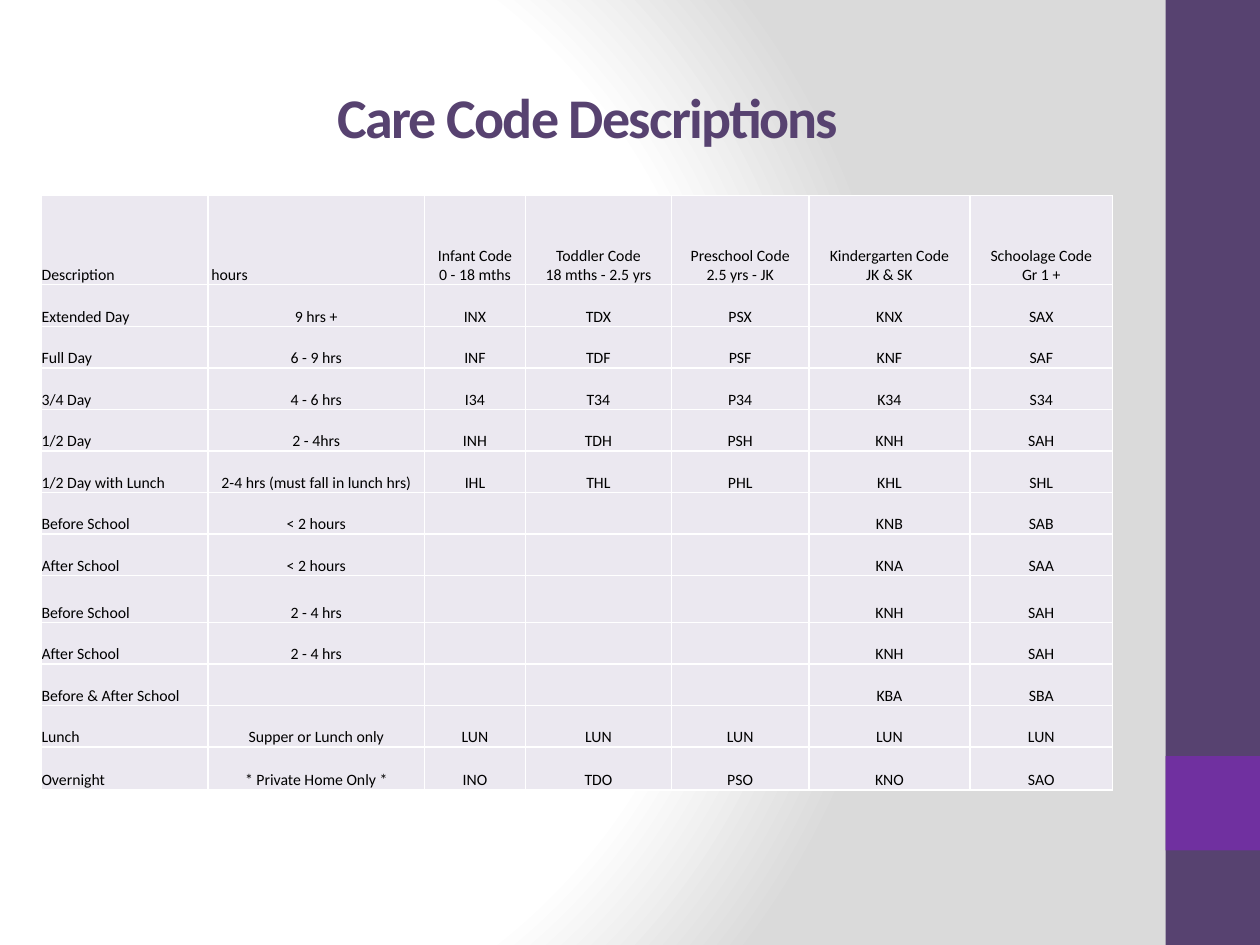
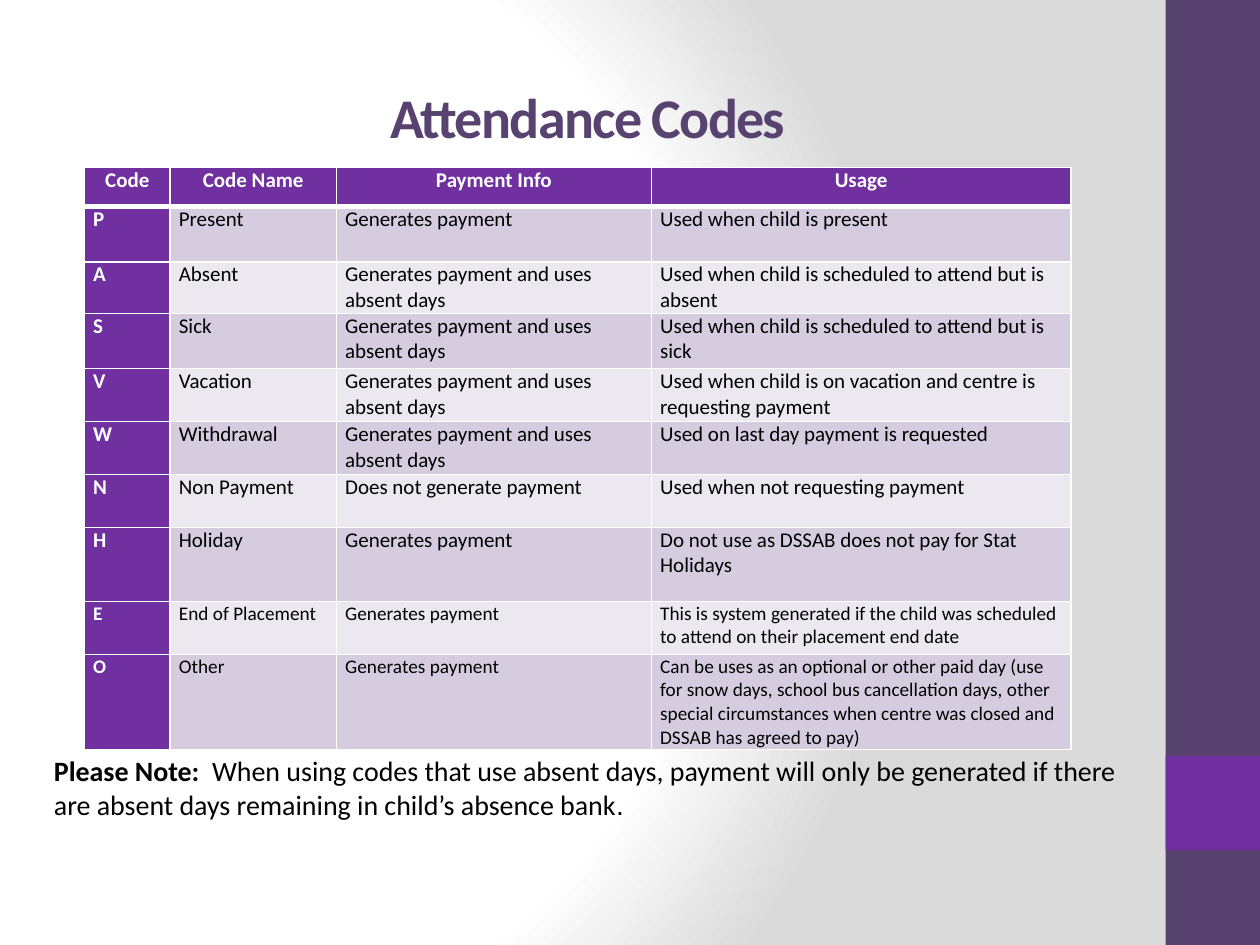
from dataclasses import dataclass

from lxml.etree import SubElement
from pptx import Presentation
from pptx.dml.color import RGBColor
from pptx.enum.shapes import MSO_SHAPE as Shape
from pptx.enum.text import MSO_ANCHOR as Anchor, MSO_AUTO_SIZE as AutoSize, PP_ALIGN as Align
from pptx.oxml import parse_xml
from pptx.oxml.ns import nsdecls, qn
from pptx.util import Inches, Pt

FONT = "Calibri"
COLORS = {
    "plum": "574270",
    "violet": "7030A0",
    "lilac": "D5CDDF",
    "pale": "EBE8F0",
    "grey": "DADADA",
    "white": "FFFFFF",
    "black": "000000",
}


@dataclass(frozen=True)
class Band:
    top: float
    height: float
    color: str


@dataclass(frozen=True)
class CellStyle:
    fill: str
    color: str = "black"
    size: float = 12
    bold: bool = False
    align: Align = Align.LEFT
    anchor: Anchor = Anchor.TOP
    side_margin: float = 0
    top_line: float = 1
    bottom_line: float = 1


BAND_LEFT, BAND_WIDTH = 9.25, 0.75
BANDS = [Band(0, 7.5, "plum"), Band(6, 0.75, "violet")]

# Care codes: description, hours, then one code per age group
CARE_COLUMNS = [1.32, 1.72, 0.8, 1.16, 1.09, 1.28, 1.13]
CARE_HEIGHTS = [0.71] + [0.33] * 7 + [0.37] + [0.33] * 3 + [0.34]
NO_CODES = [""] * 3
CARE_ROWS = [
    ["Description", " hours", "Infant Code\n0 - 18 mths", "Toddler Code\n18 mths - 2.5 yrs",
     "Preschool Code\n2.5 yrs - JK", "Kindergarten Code\nJK & SK", "Schoolage Code\nGr 1 +"],
    ["Extended Day", "9 hrs +", "INX", "TDX", "PSX", "KNX", "SAX"],
    ["Full Day", "6 - 9 hrs", "INF", "TDF", "PSF", "KNF", "SAF"],
    ["3/4 Day", "4 - 6 hrs", "I34", "T34", "P34", "K34", "S34"],
    ["1/2 Day", "2 - 4hrs", "INH", "TDH", "PSH", "KNH", "SAH"],
    ["1/2 Day with Lunch", "2-4 hrs (must fall in lunch hrs)", "IHL", "THL", "PHL", "KHL", "SHL"],
    ["Before School", "< 2 hours", *NO_CODES, "KNB", "SAB"],
    ["After School", "< 2 hours", *NO_CODES, "KNA", "SAA"],
    ["Before School", "2 - 4 hrs", *NO_CODES, "KNH", "SAH"],
    ["After School", "2 - 4 hrs", *NO_CODES, "KNH", "SAH"],
    ["Before & After School", "", *NO_CODES, "KBA", "SBA"],
    ["Lunch", "Supper or Lunch only"] + ["LUN"] * 5,
    ["Overnight", "* Private Home Only *", "INO", "TDO", "PSO", "KNO", "SAO"],
]

# Attendance codes: code, name, payment, usage
ATTENDANCE_COLUMNS = [0.68, 1.32, 2.5, 3.33]
ATTENDANCE_HEIGHTS = [0.31, 0.44, 0.4, 0.44, 0.42, 0.42, 0.42, 0.59, 0.42, 0.74]
PAID = "Generates payment"
PAID_ABSENT = "Generates payment and uses absent days"
ATTENDANCE_ROWS = [
    ["Code", "Code Name", "Payment Info", "Usage"],
    ["P", "Present", PAID, "Used when child is present"],
    ["A", "Absent", PAID_ABSENT, "Used when child is scheduled to attend but is absent"],
    ["S", "Sick", PAID_ABSENT, "Used when child is scheduled to attend but is sick"],
    ["V", "Vacation", PAID_ABSENT,
     "Used when child is on vacation and centre is requesting payment"],
    ["W", "Withdrawal", PAID_ABSENT, "Used on last day payment is requested"],
    ["N", "Non Payment", "Does not generate payment", "Used when not requesting payment"],
    ["H", "Holiday", PAID, "Do not use as DSSAB does not pay for Stat Holidays"],
    ["E", "End of Placement", PAID,
     "This is system generated if the child was scheduled to attend on their placement end date"],
    ["O", "Other", PAID,
     "Can be uses as an optional or other paid day (use for snow days, school bus cancellation "
     "days, other special circumstances when centre was closed and DSSAB has agreed to pay)"],
]


def rgb(name: str) -> RGBColor:
    return RGBColor.from_string(COLORS[name])


def add_text(para, text: str, *, size: float, color: str = "black", bold: bool = False,
             font: str = FONT, spacing: float = 0) -> None:
    """Append text to a paragraph; a newline becomes a line break."""
    for number, line in enumerate(text.split("\n")):
        if number:
            para.add_line_break()
            line_break = para._p.findall(qn("a:br"))[-1]
            SubElement(line_break, qn("a:rPr"), sz=str(int(size * 100)))
        span = para.add_run()
        span.text = line
        span.font.name, span.font.size, span.font.bold = font, Pt(size), bold
        span.font.color.rgb = rgb(color)
        if spacing:
            span.font._element.set("spc", str(int(spacing * 100)))


def set_background(master) -> None:
    """Give every slide the white to grey radial gradient."""
    master.background.fill.solid()
    properties = master.element.xpath("p:cSld/p:bg/p:bgPr")[0]
    stops = "".join(
        f'<a:gs pos="{percent * 1000}"><a:srgbClr val="{COLORS[color]}"/></a:gs>'
        for percent, color in [(0, "white"), (75, "white"), (100, "grey")])
    gradient = parse_xml(
        f'<a:gradFill {nsdecls("a")} rotWithShape="1"><a:gsLst>{stops}</a:gsLst>'
        '<a:path path="circle"><a:fillToRect l="20000" t="50000" r="100000" b="50000"/></a:path>'
        '</a:gradFill>')
    properties.replace(properties.find(qn("a:solidFill")), gradient)


def add_page(deck, title: str):
    """Add a slide with the side bands and a formatted title."""
    page = deck.slides.add_slide(deck.slide_layouts[5])
    for band in BANDS:
        box = page.shapes.add_shape(Shape.RECTANGLE, Inches(BAND_LEFT), Inches(band.top),
                                    Inches(BAND_WIDTH), Inches(band.height))
        box.shadow.inherit = False
        box.fill.solid()
        box.fill.fore_color.rgb = rgb(band.color)
        box.line.fill.background()
    heading = page.shapes.title
    heading.left, heading.top = Inches(0.5), Inches(0.3)
    heading.width, heading.height = Inches(8.33), Inches(1.25)
    frame = heading.text_frame
    frame.auto_size, frame.vertical_anchor = AutoSize.NONE, Anchor.MIDDLE
    para = frame.paragraphs[0]
    para.alignment = Align.CENTER
    add_text(para, title, size=32, color="plum", bold=True, spacing=-1)
    return page


def format_cell(cell, text: str, style: CellStyle) -> None:
    cell.margin_left = cell.margin_right = Inches(style.side_margin)
    cell.margin_top = cell.margin_bottom = 0
    cell.vertical_anchor = style.anchor
    cell.fill.solid()
    cell.fill.fore_color.rgb = rgb(style.fill)
    borders = {"lnL": 1, "lnR": 1, "lnT": style.top_line, "lnB": style.bottom_line}
    for position, (side, width) in enumerate(borders.items()):
        border = parse_xml(
            f'<a:{side} {nsdecls("a")} w="{Pt(width)}"><a:solidFill>'
            f'<a:srgbClr val="{COLORS["white"]}"/></a:solidFill></a:{side}>')
        cell._tc.get_or_add_tcPr().insert(position, border)
    if text:
        para = cell.text_frame.paragraphs[0]
        para.alignment = style.align
        add_text(para, text, size=style.size, color=style.color, bold=style.bold)


def add_grid(page, left: float, top: float, columns: list[float], heights: list[float],
             rows: list[list[str]], style_at) -> None:
    """Draw a table; style_at(row, column) gives the style of each cell."""
    table = page.shapes.add_table(len(rows), len(columns), Inches(left), Inches(top),
                                  Inches(sum(columns)), Inches(sum(heights))).table
    table.first_row = table.horz_banding = False
    for column, width in zip(table.columns, columns):
        column.width = Inches(width)
    for row, height in zip(table.rows, heights):
        row.height = Inches(height)
    for r, texts in enumerate(rows):
        for c, text in enumerate(texts):
            format_cell(table.cell(r, c), text, style_at(r, c))


def care_style(row: int, column: int) -> CellStyle:
    at_left = column == 0 or (row == 0 and column == 1)
    return CellStyle("pale", size=9, align=Align.LEFT if at_left else Align.CENTER,
                     anchor=Anchor.BOTTOM)


def attendance_style(row: int, column: int) -> CellStyle:
    strong = row == 0 or column == 0
    return CellStyle(
        fill="violet" if strong else "lilac" if row % 2 else "pale",
        color="white" if strong else "black",
        size=11 if row >= 8 else 12,
        bold=strong,
        align=Align.CENTER if row == 0 else Align.LEFT,
        side_margin=0.07,
        top_line=3 if row == 1 else 1,
        bottom_line=3 if row == 0 else 1)


def add_note(page) -> None:
    box = page.shapes.add_textbox(Inches(0.33), Inches(5.93), Inches(8.67), Inches(0.64))
    frame = box.text_frame
    frame.word_wrap = True
    frame.auto_size, frame.vertical_anchor = AutoSize.SHAPE_TO_FIT_TEXT, Anchor.MIDDLE
    para = frame.paragraphs[0]
    add_text(para, "Please Note:", size=16, bold=True)
    add_text(para, "  When using codes that use absent days, payment will only be generated if "
                   "there are absent days remaining in child’s absence bank", size=16)
    add_text(para, ".", size=16, font="Arial")


def main() -> None:
    deck = Presentation()
    deck.slide_width, deck.slide_height = Inches(10), Inches(7.5)
    set_background(deck.slide_master)

    # Care codes
    page = add_page(deck, "Care Code Descriptions")
    add_grid(page, 0.33, 1.55, CARE_COLUMNS, CARE_HEIGHTS, CARE_ROWS, care_style)

    # Attendance codes
    page = add_page(deck, "Attendance Codes")
    add_grid(page, 0.67, 1.33, ATTENDANCE_COLUMNS, ATTENDANCE_HEIGHTS, ATTENDANCE_ROWS,
             attendance_style)
    add_note(page)

    deck.save("out.pptx")


if __name__ == "__main__":
    main()
